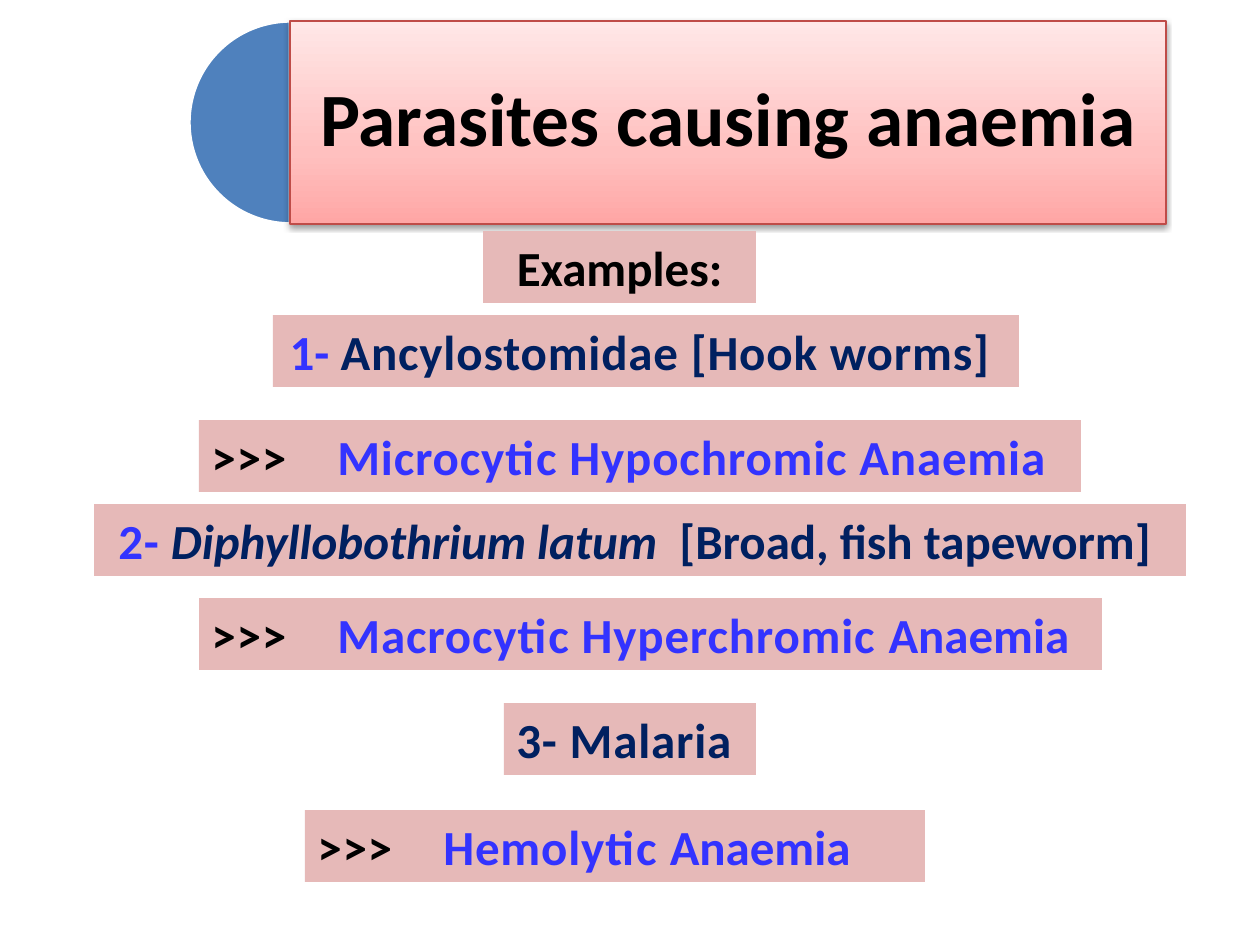
from copy import deepcopy
from dataclasses import dataclass

from lxml.etree import SubElement
from pptx import Presentation
from pptx.dml.color import RGBColor as RGB
from pptx.enum.shapes import MSO_SHAPE as SHAPE
from pptx.enum.text import MSO_ANCHOR as ANCHOR, MSO_AUTO_SIZE as AUTO, PP_ALIGN as ALIGN
from pptx.oxml.ns import qn
from pptx.util import Emu, Pt

COLORS = {
    "black": "000000", "white": "FFFFFF", "blue": "3333FF", "navy": "002060",
    "pink": "E6B9B8", "pie": "4F81BD", "edge": "BF4C48",
}
TITLE_STOPS = [(0, "FFA6A5"), (0.35, "FFC0BF"), (1, "FFE7E7")]
FONT = "Calibri"
LABEL_H = 72


@dataclass
class Span:
    text: str
    color: str
    spacing: int = 0  # hundredths of a point
    italic: bool = False


@dataclass
class Label:
    x: int
    y: int
    w: int
    spans: list[Span]
    align: ALIGN = ALIGN.LEFT


def px(n: int) -> Emu:
    return Emu(round(n * 914400 / 126))


def rgb(name: str) -> RGB:
    return RGB.from_string(COLORS[name])


def style_run(r, size: int, color: str, spacing: int = 0, italic: bool = False) -> None:
    r.font.name, r.font.size, r.font.bold = FONT, Pt(size), True
    r.font.italic = italic
    r.font.color.rgb = rgb(color)
    if spacing:
        r.font._element.set("spc", str(spacing))


def add_label(s, label: Label) -> None:
    sp = s.shapes.add_textbox(px(label.x), px(label.y), px(label.w), px(LABEL_H))
    sp.fill.solid()
    sp.fill.fore_color.rgb = rgb("pink")
    tf = sp.text_frame
    tf.word_wrap = True
    tf.auto_size = AUTO.SHAPE_TO_FIT_TEXT
    p = tf.paragraphs[0]
    p.alignment = label.align
    for span in label.spans:
        r = p.add_run()
        r.text = span.text
        style_run(r, 28, span.color, span.spacing, span.italic)


def add_shadow(sp) -> None:
    sp.shadow.inherit = False
    effects = sp._element.spPr.find(qn("a:effectLst"))
    shadow = SubElement(effects, qn("a:outerShdw"), blurRad=str(Pt(3.1)),
                        dist=str(Pt(1.6)), dir="5400000", rotWithShape="0")
    color = SubElement(shadow, qn("a:srgbClr"), val=COLORS["black"])
    SubElement(color, qn("a:alpha"), val="38000")


def add_title(s, text: str) -> None:
    # Half disc behind the left edge
    pie = s.shapes.add_shape(SHAPE.PIE, px(189), px(21), px(203), px(203))
    pie.adjustments[0], pie.adjustments[1] = 54, 162  # 90 to 270 degrees
    pie.shadow.inherit = False
    pie.fill.solid()
    pie.fill.fore_color.rgb = rgb("pie")
    pie.line.color.rgb = rgb("white")
    pie.line.width = Pt(2)

    # Gradient panel
    sp = s.shapes.add_shape(SHAPE.RECTANGLE, px(290), px(21), px(876), px(203))
    sp.fill.gradient()
    sp.fill.gradient_angle = 90
    stops = sp._element.spPr.find(qn("a:gradFill")).find(qn("a:gsLst"))
    stops.append(deepcopy(stops[-1]))
    for stop, (position, color) in zip(sp.fill.gradient_stops, TITLE_STOPS):
        stop.position = position
        stop.color.rgb = RGB.from_string(color)
    sp.line.color.rgb = rgb("edge")
    sp.line.width = Pt(0.75)
    add_shadow(sp)

    # Heading
    tf = sp.text_frame
    tf.text = text
    tf.word_wrap = True
    tf.vertical_anchor = ANCHOR.MIDDLE
    tf.margin_left = tf.margin_right = tf.margin_top = tf.margin_bottom = px(23)
    p = tf.paragraphs[0]
    p.alignment = ALIGN.CENTER
    p.line_spacing = 0.9
    style_run(p.runs[0], 43, "black")


ARROWS = Span(">>>\t", "black", 50)
LABELS = [
    Label(483, 231, 273, [Span("Examples:", "black")], ALIGN.CENTER),
    Label(273, 315, 746, [Span("1- ", "blue"),
                          Span("Ancylostomidae [Hook worms] ", "navy", 50)], ALIGN.CENTER),
    Label(199, 420, 882, [ARROWS, Span("Microcytic Hypochromic Anaemia", "blue", 50)]),
    Label(94, 504, 1092, [Span("2-", "blue", 50),
                          Span(" Diphyllobothrium latum ", "navy", italic=True),
                          Span(" [Broad, fish tapeworm] ", "navy")], ALIGN.CENTER),
    Label(199, 598, 903, [ARROWS, Span("Macrocytic Hyperchromic ", "blue", 50),
                          Span("Anaemia", "blue")]),
    Label(504, 703, 252, [Span("3- Malaria", "navy", 50)]),
    Label(305, 810, 620, [ARROWS, Span("Hemolytic ", "blue", 50), Span("Anaemia", "blue")]),
]


def main() -> None:
    prs = Presentation()
    prs.slide_width, prs.slide_height = px(1260), px(945)
    s = prs.slides.add_slide(prs.slide_layouts[6])
    add_title(s, "Parasites causing anaemia")
    for label in LABELS:
        add_label(s, label)
    prs.save("out.pptx")


if __name__ == "__main__":
    main()
